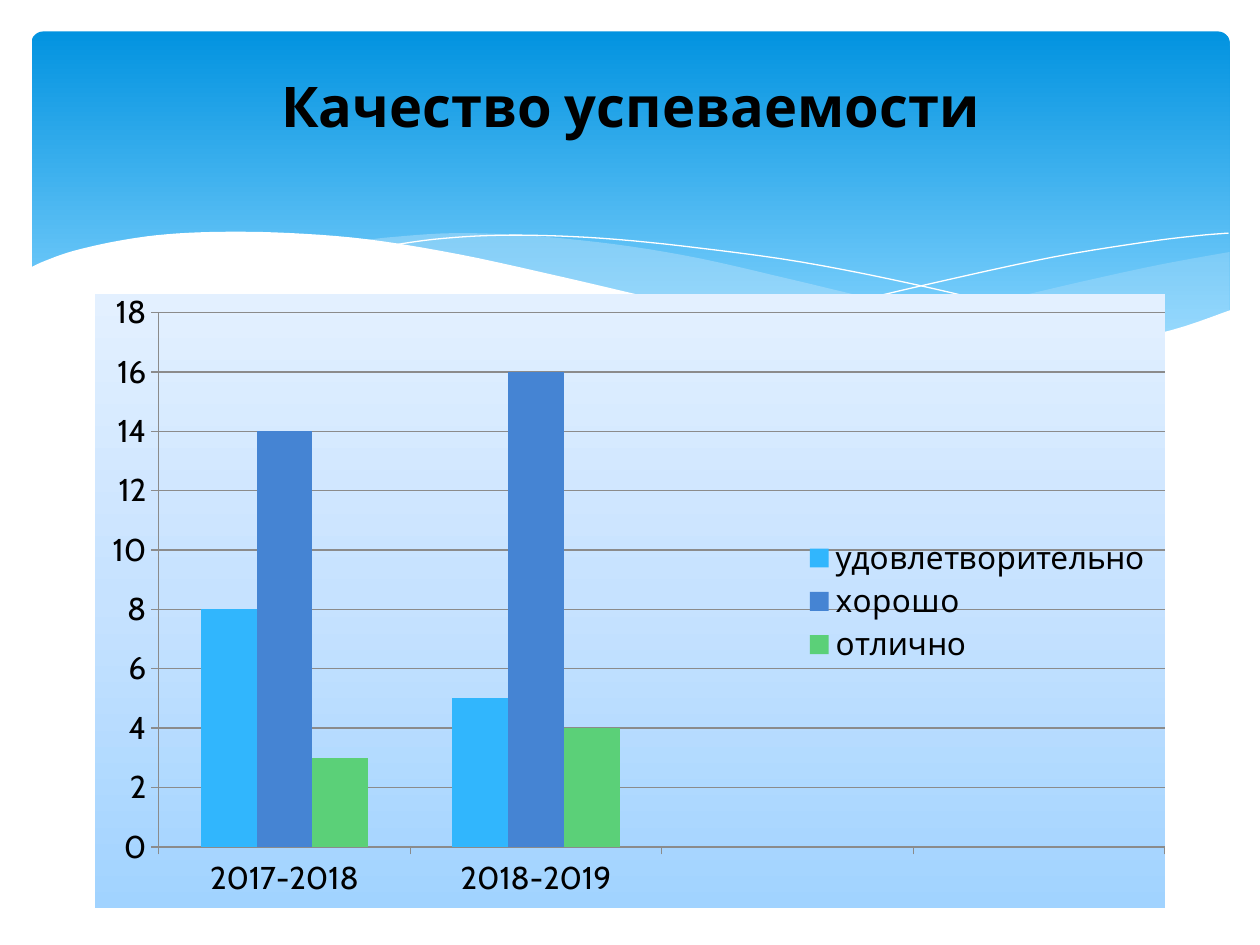
import pptx
import pptx.chart.data
import pptx.dml.color
import pptx.enum.chart
import pptx.enum.shapes
import pptx.enum.text
import pptx.oxml
import pptx.oxml.ns
import pptx.util
from lxml import etree

Inches = pptx.util.Inches
Pt = pptx.util.Pt
qn = pptx.oxml.ns.qn

FONT = "Cabin"
COLORS = {
    "text": "000000", "white": "FFFFFF", "mist": "C6E7FC", "axis": "8B8B8B",
    "sky_top": "0293E0", "sky_bottom": "83D3FE",
    "panel_bottom": "A1D3FF", "panel_middle": "C6E2FF", "panel_top": "E3F0FF",
    "satisfactory": "31B6FD", "good": "4584D3", "excellent": "5BD078",
}


def rgb(name):
    return pptx.dml.color.RGBColor.from_string(COLORS[name])


def gradient_element(stops, angle):
    """Linear gradient fill from (percent, colour name) stops."""
    gradient = etree.Element(qn("a:gradFill"), rotWithShape="1")
    stop_list = etree.SubElement(gradient, qn("a:gsLst"))
    for percent, name in stops:
        stop = etree.SubElement(stop_list, qn("a:gs"), pos=str(percent * 1000))
        etree.SubElement(stop, qn("a:srgbClr"), val=COLORS[name])
    etree.SubElement(gradient, qn("a:lin"), ang=str(angle * 60000), scaled="0")
    return gradient


def smooth(points, steps=5):
    """Catmull-Rom curve through the points."""
    padded = [points[0], *points, points[-1]]
    curve = [points[0]]
    for p0, p1, p2, p3 in zip(padded, padded[1:], padded[2:], padded[3:]):
        for step in range(1, steps + 1):
            t = step / steps
            curve.append(tuple(
                b + t * (c - a + t * (2 * a - 5 * b + 4 * c - d
                                      + t * (3 * (b - c) + d - a))) / 2
                for a, b, c, d in zip(p0, p1, p2, p3)))
    return curve


def add_wave(slide, box, edges, fill=None, alpha=100):
    """Filled wave bounded by smooth edges, or an open white hairline."""
    left, top = box[:2]
    points = [(Inches(left + x), Inches(top + y))
              for edge in edges for x, y in smooth(edge)]
    builder = slide.shapes.build_freeform(*points[0])
    builder.add_line_segments(points[1:], close=fill is not None)
    shape = builder.convert_to_shape()
    shape.shadow.inherit = False
    if fill is None:
        shape.fill.background()
        shape.line.color.rgb = rgb("white")
        shape.line.width = 0
        return
    shape.fill.solid()
    shape.fill.fore_color.rgb = rgb(fill)
    shape.line.fill.background()
    if alpha < 100:
        color = shape.fill._xPr.find(".//" + qn("a:srgbClr"))
        etree.SubElement(color, qn("a:alpha"), val=str(alpha * 1000))


def add_header(slide, box):
    """Gradient banner with waves; wave points are measured from its corner."""
    banner = slide.shapes.add_shape(
        pptx.enum.shapes.MSO_SHAPE.ROUNDED_RECTANGLE, *map(Inches, box))
    banner.adjustments[0] = 0.034
    banner.shadow.inherit = False
    banner.line.fill.background()
    banner._element.spPr.find(qn("a:prstGeom")).addnext(
        gradient_element([(0, "sky_top"), (90, "sky_bottom")], 90))

    # Translucent waves
    add_wave(slide, box, [
        [(9.51, 1.75), (8.96, 1.85), (8.36, 1.98), (7.54, 2.17),
         (6.81, 2.32), (6.36, 2.4)],
        [(6.36, 2.4), (6.94, 2.47), (7.44, 2.52), (7.89, 2.53),
         (8.38, 2.5), (8.8, 2.44), (9.17, 2.34), (9.51, 2.22)],
    ], "mist", 29)
    add_wave(slide, box, [
        [(8.68, 2.48), (7.82, 2.35), (6.81, 2.15), (6.04, 1.97),
         (5.3, 1.8), (4.64, 1.69), (3.95, 1.62), (3.36, 1.6),
         (2.88, 1.63), (2.61, 1.66)],
        [(2.61, 1.66), (3.17, 1.74), (3.79, 1.86), (4.66, 2.07),
         (5.41, 2.23), (6.09, 2.36), (6.7, 2.45), (7.23, 2.51),
         (7.71, 2.53), (8.23, 2.52), (8.68, 2.48)],
    ], "mist", 40)

    # Hairlines
    add_wave(slide, box, [
        [(2.84, 1.7), (3.19, 1.65), (3.62, 1.62), (4.08, 1.62),
         (4.64, 1.65), (5.31, 1.72), (6.11, 1.83), (7.02, 2.01),
         (8.06, 2.26), (8.82, 2.47)]])
    add_wave(slide, box, [
        [(5.88, 2.32), (6.47, 2.16), (7.23, 1.98), (8.11, 1.79),
         (8.85, 1.67), (9.26, 1.62), (9.5, 1.6)]])

    # White wave covering the lower edge
    add_wave(slide, box, [
        [(9.52, 2.21), (9.05, 2.37), (8.5, 2.48), (7.98, 2.52),
         (7.36, 2.5), (6.63, 2.43), (5.78, 2.29), (5.04, 2.14),
         (4.22, 1.95), (3.4, 1.77), (2.67, 1.65), (2.05, 1.6),
         (1.52, 1.59), (1.07, 1.61), (0.7, 1.66), (0.34, 1.74),
         (0.11, 1.82), (-0.02, 1.88)],
        [(-0.02, 3.04), (9.52, 3.04)],
    ], "white")


def set_layout(parent, inner, x, y, width, height):
    """Manual layout in fractions of the chart area."""
    layout = parent.find(qn("c:layout"))
    if layout is None:
        layout = etree.Element(qn("c:layout"))
        if inner:
            parent.insert(0, layout)
        else:
            parent.find(qn("c:legendPos")).addnext(layout)
    manual = etree.SubElement(layout, qn("c:manualLayout"))
    settings = [("layoutTarget", "inner")] if inner else []
    settings += [("xMode", "edge"), ("yMode", "edge"),
                 ("x", x), ("y", y), ("w", width), ("h", height)]
    for tag, value in settings:
        etree.SubElement(manual, qn("c:" + tag), val=str(value))


def add_grades_chart(slide, box):
    """Clustered columns with two spare categories behind the legend."""
    series_data = [("удовлетворительно", (8, 5), "satisfactory"),
                   ("хорошо", (14, 16), "good"),
                   ("отлично", (3, 4), "excellent")]
    data = pptx.chart.data.CategoryChartData()
    data.categories = ["2017-2018", "2018-2019", "", ""]
    for name, values, _ in series_data:
        data.add_series(name, (*values, None, None))
    chart = slide.shapes.add_chart(
        pptx.enum.chart.XL_CHART_TYPE.COLUMN_CLUSTERED,
        *map(Inches, box), data).chart
    chart.has_title = False
    chart.font.name = FONT
    chart.font.size = Pt(18)
    chart.font.color.rgb = rgb("text")

    plot = chart.plots[0]
    plot.vary_by_categories = False
    plot.gap_width = 150
    plot.overlap = 0
    for series, (_, _, color) in zip(plot.series, series_data):
        series.format.fill.solid()
        series.format.fill.fore_color.rgb = rgb(color)

    # Axes and gridlines
    value_axis = chart.value_axis
    value_axis.minimum_scale, value_axis.maximum_scale = 0, 18
    value_axis.major_unit = 2
    value_axis.has_major_gridlines = True
    for part in (chart.category_axis, value_axis, value_axis.major_gridlines):
        part.format.line.color.rgb = rgb("axis")
        part.format.line.width = Pt(0.75)
    for axis in (chart.category_axis, value_axis):
        axis.major_tick_mark = pptx.enum.chart.XL_TICK_MARK.OUTSIDE

    # Legend over the empty half, plot across the full width
    chart.has_legend = True
    chart.legend.position = pptx.enum.chart.XL_LEGEND_POSITION.RIGHT
    chart.legend.include_in_layout = False
    set_layout(chart.legend._element, False, 0.66, 0.39, 0.33, 0.22)
    chart_space = chart._chartSpace
    set_layout(chart_space.find(".//" + qn("c:plotArea")), True,
               0.06, 0.03, 0.94, 0.87)

    # Gradient panel
    panel = etree.Element(qn("c:spPr"))
    panel.append(gradient_element(
        [(0, "panel_bottom"), (50, "panel_middle"), (100, "panel_top")], 270))
    outline = etree.SubElement(panel, qn("a:ln"))
    etree.SubElement(outline, qn("a:noFill"))
    chart_space.find(qn("c:chart")).addnext(panel)


def add_title(slide, box, text):
    frame = slide.shapes.add_textbox(*map(Inches, box)).text_frame
    frame.word_wrap = True
    frame.auto_size = pptx.enum.text.MSO_AUTO_SIZE.SHAPE_TO_FIT_TEXT
    paragraph = frame.paragraphs[0]
    paragraph.alignment = pptx.enum.text.PP_ALIGN.CENTER
    run = paragraph.add_run()
    run.text = text
    run.font.name, run.font.size, run.font.bold = FONT, Pt(32), True
    run.font.color.rgb = rgb("text")


def main():
    presentation = pptx.Presentation()
    presentation.slide_width, presentation.slide_height = Inches(10), Inches(7.5)
    slide = presentation.slides.add_slide(presentation.slide_layouts[6])
    add_header(slide, (0.25, 0.25, 9.51, 2.7))
    add_grades_chart(slide, (0.75, 2.33, 8.5, 4.88))
    add_title(slide, (0.91, 0.52, 8.19, 0.64), "Качество успеваемости")
    presentation.save("out.pptx")


if __name__ == "__main__":
    main()
